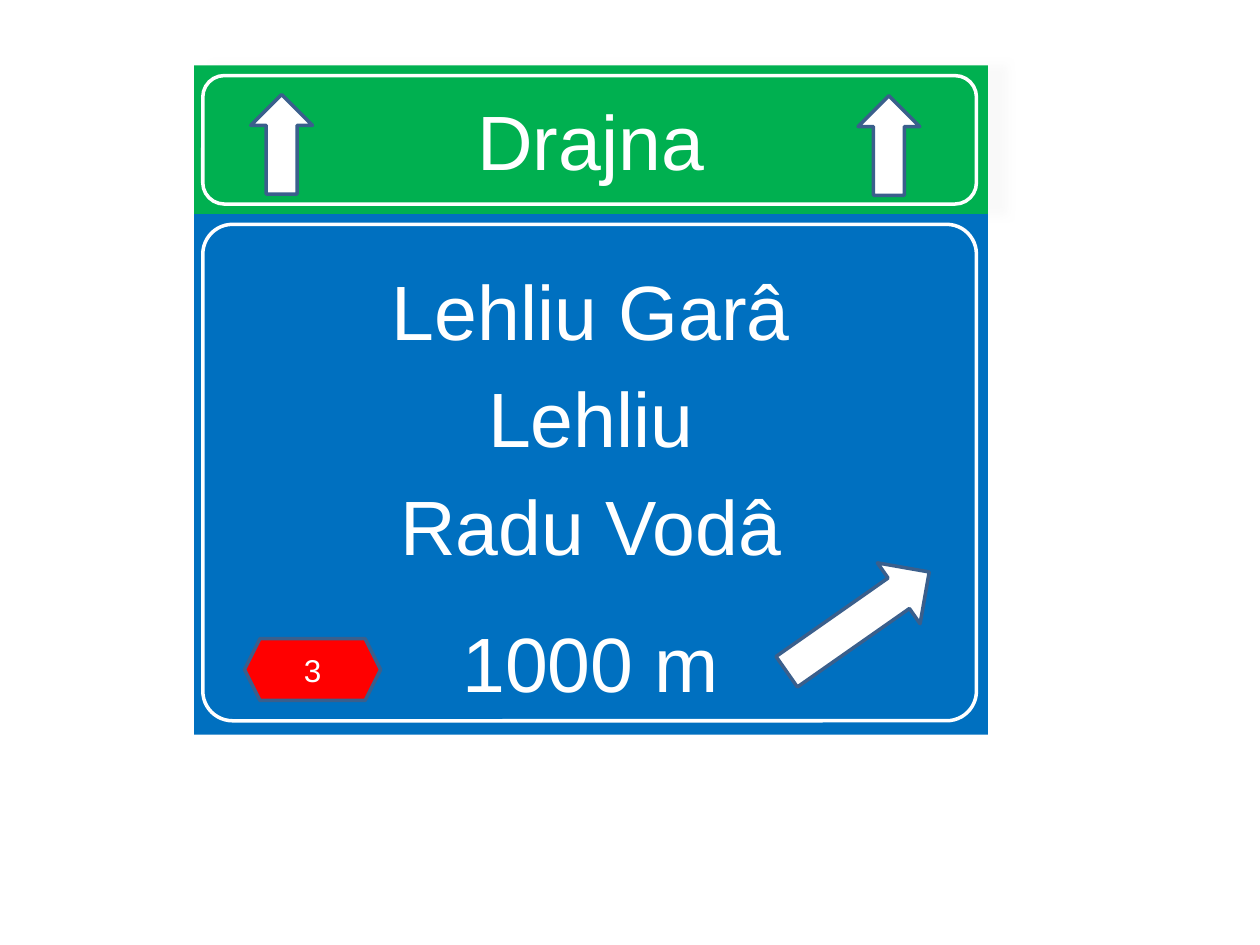
from typing import NamedTuple, Optional

from lxml.etree import SubElement
from pptx import Presentation
from pptx.dml.color import RGBColor
from pptx.enum.shapes import MSO_SHAPE
from pptx.enum.text import MSO_ANCHOR, MSO_AUTO_SIZE, PP_ALIGN
from pptx.oxml.ns import qn
from pptx.util import Pt

COLORS = {
    "white": "FFFFFF",
    "green": "00B050",
    "blue": "0070C0",
    "red": "FF0000",
    "outline": "3A5F8C",
    "shadow": "F2F2F2",
}
FONT = "Arial"
SIGN_LEFT, SIGN_WIDTH = 110.9, 453.6


class Area(NamedTuple):
    left: float
    top: float
    width: float
    height: float


class Item(NamedTuple):
    kind: MSO_SHAPE
    area: Area
    fill: Optional[str]
    line: Optional[str]
    rotation: float = 0
    corner: Optional[float] = None


class Line(NamedTuple):
    text: str
    space_before: float = 0


def color(name: str) -> RGBColor:
    return RGBColor.from_string(COLORS[name])


def place(shape, area: Area) -> None:
    shape.left, shape.top, shape.width, shape.height = (Pt(value) for value in area)


def draw(page, item: Item):
    shape = page.shapes.add_shape(item.kind, *(Pt(value) for value in item.area))
    shape.shadow.inherit = False
    shape.rotation = item.rotation
    if item.corner is not None:
        shape.adjustments[0] = item.corner
    if item.fill:
        shape.fill.solid()
        shape.fill.fore_color.rgb = color(item.fill)
    else:
        shape.fill.background()
    if item.line:
        shape.line.color.rgb = color(item.line)
        shape.line.width = Pt(2)
    else:
        shape.line.fill.background()
    return shape


def write(shape, lines: list[Line], size: float, anchor=MSO_ANCHOR.MIDDLE) -> None:
    frame = shape.text_frame
    frame.word_wrap = True
    frame.auto_size = MSO_AUTO_SIZE.NONE
    frame.vertical_anchor = anchor
    for index, line in enumerate(lines):
        para = frame.add_paragraph() if index else frame.paragraphs[0]
        para.text = line.text
        para.alignment = PP_ALIGN.CENTER
        para.space_before = Pt(line.space_before)
        para.font.name = FONT
        para.font.size = Pt(size)
        para.font.color.rgb = color("white")


def cast_shadow(shape, distance: float, blur: float) -> None:
    shape.shadow.inherit = False
    effects = shape._element.spPr.find(qn("a:effectLst"))
    shadow = SubElement(effects, qn("a:outerShdw"), dist=str(Pt(distance)),
                        blurRad=str(Pt(blur)), dir="0", rotWithShape="0")
    tint = SubElement(shadow, qn("a:srgbClr"), val=COLORS["shadow"])
    SubElement(tint, qn("a:alpha"), val="40000")


def build() -> None:
    deck = Presentation()
    deck.slide_width, deck.slide_height = Pt(720), Pt(540)
    page = deck.slides.add_slide(deck.slide_layouts[5])

    title = page.shapes.title
    place(title, Area(SIGN_LEFT, 37.4, SIGN_WIDTH, 85))
    title.fill.solid()
    title.fill.fore_color.rgb = color("green")
    cast_shadow(title, 11, 5)
    write(title, [Line("Drajna")], 44)

    panel = draw(page, Item(MSO_SHAPE.RECTANGLE, Area(SIGN_LEFT, 122.4, SIGN_WIDTH, 297.4),
                            "blue", None))
    panel.text_frame.margin_top = Pt(28)
    destinations = [Line("Lehliu Garâ"), Line("Lehliu", 8.8),
                    Line("Radu Vodâ", 8.8), Line("1000 m", 25.6)]
    write(panel, destinations, 44, MSO_ANCHOR.TOP)

    arrows = [
        Item(MSO_SHAPE.RIGHT_ARROW, Area(440.6, 334.1, 99.4, 42.5), "white", "outline", 325),
        Item(MSO_SHAPE.UP_ARROW, Area(143.3, 54, 35.3, 56.9), "white", "outline"),
        Item(MSO_SHAPE.UP_ARROW, Area(490.3, 54.7, 35.3, 56.9), "white", "outline"),
    ]
    for arrow in arrows:
        draw(page, arrow)

    exit_badge = draw(page, Item(MSO_SHAPE.HEXAGON, Area(139.7, 365, 77.8, 35.3),
                                 "red", "outline"))
    write(exit_badge, [Line("3")], 18)

    borders = [
        Item(MSO_SHAPE.ROUNDED_RECTANGLE, Area(115.9, 43.2, 442.1, 73.4), None, "white"),
        Item(MSO_SHAPE.ROUNDED_RECTANGLE, Area(115.9, 128.2, 442.1, 283.7), None, "white",
             corner=0.06),
    ]
    for border in borders:
        draw(page, border)

    deck.save("out.pptx")


if __name__ == "__main__":
    build()
